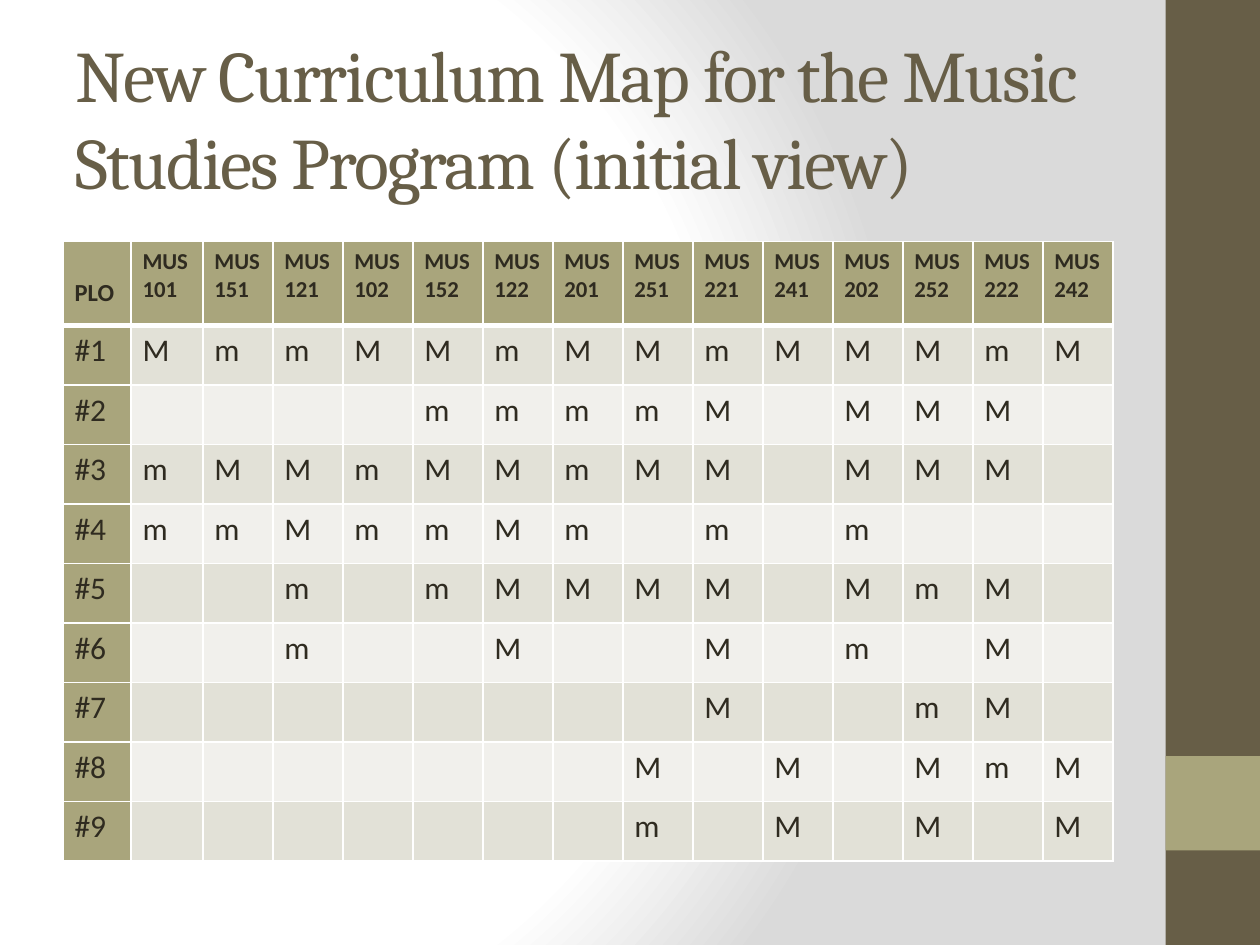
import pptx
import pptx.util
import pptx.dml.color
import pptx.enum.shapes
import pptx.enum.text
import pptx.oxml
import pptx.oxml.ns

Pt = pptx.util.Pt
DARK, OLIVE, INK, WHITE = "675E47", "A9A57C", "2F2B20", "FFFFFF"
BANDS = ["E2E1D7", "F1F0EC"]
COURSES = [101, 151, 121, 102, 152, 122, 201, 251, 221, 241, 202, 252, 222, 242]
OUTCOMES = [
    "MmmMMmMMmMMMmM",
    "....mmmmM.MMM.",
    "mMMmMMmMM.MMM.",
    "mmMmmMm.m.m...",
    "..m.mMMMM.MmM.",
    "..m..M..M.m.M.",
    "........M..mM.",
    ".......M.M.MmM",
    ".......m.M.M.M",
]


def rgb(color):
    return pptx.dml.color.RGBColor.from_string(color)


def write(tf, text, size=18, font="Calibri", color=INK, bold=False, spacing=None):
    for i, line in enumerate(text.split("\n")):
        p = tf.paragraphs[0] if i == 0 else tf.add_paragraph()
        r = p.add_run()
        r.text = line
        r.font.size = Pt(size)
        r.font.name = font
        r.font.bold = bold
        r.font.color.rgb = rgb(color)
        if spacing is not None:
            r.font._element.set("spc", str(int(spacing * 100)))


def add_background(s):
    stops = "".join(
        f'<a:gs pos="{pos * 1000}"><a:srgbClr val="{color}"/></a:gs>'
        for pos, color in [(0, WHITE), (75, WHITE), (100, "DADADA")]
    )
    s.element.cSld.insert(0, pptx.oxml.parse_xml(
        f'<p:bg {pptx.oxml.ns.nsdecls("p", "a")}><p:bgPr><a:gradFill rotWithShape="1">'
        f'<a:gsLst>{stops}</a:gsLst><a:path path="circle">'
        '<a:fillToRect l="20000" t="50000" r="100000" b="50000"/></a:path>'
        '</a:gradFill><a:effectLst/></p:bgPr></p:bg>'
    ))


def add_rect(s, left, top, width, height, color):
    sp = s.shapes.add_shape(pptx.enum.shapes.MSO_SHAPE.RECTANGLE,
                            Pt(left), Pt(top), Pt(width), Pt(height))
    sp.shadow.inherit = False
    sp.fill.solid()
    sp.fill.fore_color.rgb = rgb(color)
    sp.line.fill.background()


def add_title(s, text):
    sp = s.shapes.add_textbox(Pt(36), Pt(21.6), Pt(600), Pt(90))
    tf = sp.text_frame
    tf.word_wrap = True
    tf.vertical_anchor = pptx.enum.text.MSO_ANCHOR.MIDDLE
    write(tf, text, size=41.4, font="Cambria", color=DARK, spacing=-1)


def style_cell(cell, color, top=1, bottom=1):
    tcPr = cell._tc.get_or_add_tcPr()
    for side, width in [("L", 1), ("R", 1), ("T", top), ("B", bottom)]:
        tcPr.append(pptx.oxml.parse_xml(
            f'<a:ln{side} {pptx.oxml.ns.nsdecls("a")} w="{Pt(width)}"><a:solidFill>'
            f'<a:srgbClr val="{WHITE}"/></a:solidFill></a:ln{side}>'
        ))
    cell.fill.solid()
    cell.fill.fore_color.rgb = rgb(color)
    cell.margin_left = cell.margin_right = Pt(6.6)
    cell.margin_top = cell.margin_bottom = Pt(3.6)


def add_map(s):
    widths = [38.9, 41.1] + [40] * 13
    heights = [48] + [34] * len(OUTCOMES)
    table = s.shapes.add_table(len(heights), len(widths), Pt(36), Pt(138),
                               Pt(sum(widths)), Pt(sum(heights))).table
    for col, width in zip(table.columns, widths):
        col.width = Pt(width)
    for row, height in zip(table.rows, heights):
        row.height = Pt(height)

    for j, text in enumerate(["PLO"] + [f"MUS\n{n}" for n in COURSES]):
        cell = table.cell(0, j)
        style_cell(cell, OLIVE, bottom=3)
        write(cell.text_frame, text, size=13 if j else 14, bold=True)
    table.cell(0, 0).margin_top = Pt(20.7)

    for i, marks in enumerate(OUTCOMES, 1):
        for j, text in enumerate([f"#{i}", *marks]):
            cell = table.cell(i, j)
            style_cell(cell, BANDS[(i - 1) % 2] if j else OLIVE, top=3 if i == 1 else 1)
            if text != ".":
                write(cell.text_frame, text)


def main():
    prs = pptx.Presentation()
    prs.slide_width, prs.slide_height = Pt(720), Pt(540)
    s = prs.slides.add_slide(prs.slide_layouts[6])
    add_background(s)
    add_rect(s, 666, 0, 54, 540, DARK)
    add_rect(s, 666, 432, 54, 54, OLIVE)
    add_title(s, "New Curriculum Map for the Music Studies Program (initial view)")
    add_map(s)
    prs.save("out.pptx")


if __name__ == "__main__":
    main()
